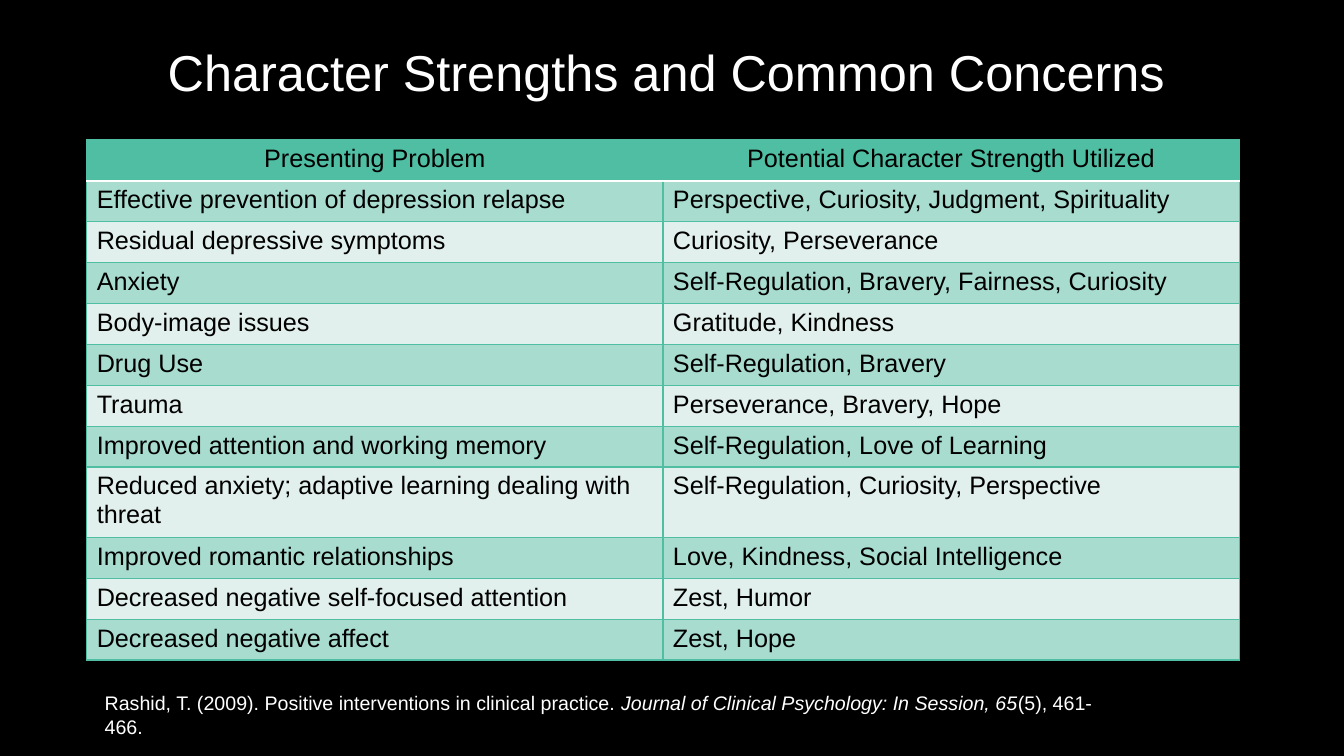
from dataclasses import dataclass
from typing import NamedTuple

from lxml.etree import SubElement
from pptx import Presentation
from pptx.dml.color import RGBColor
from pptx.enum.text import MSO_ANCHOR, MSO_AUTO_SIZE, PP_ALIGN
from pptx.oxml.ns import qn
from pptx.slide import Slide
from pptx.table import _Cell
from pptx.text.text import _Paragraph
from pptx.util import Inches, Pt

SLIDE_WIDTH = Inches(13.33)
SLIDE_HEIGHT = Inches(7.5)


@dataclass(frozen=True)
class Theme:
    font: str = "Arial"
    background: str = "000000"
    light_text: str = "FFFFFF"
    dark_text: str = "000000"
    accent: str = "50BEA3"
    dark_band: str = "A8DCCF"
    light_band: str = "E1F0EC"
    title_size: int = 36
    table_size: int = 18
    citation_size: int = 14
    grid_line: float = 1
    header_line: float = 1.5


class Area(NamedTuple):
    left: float
    top: float
    width: float
    height: float

    def lengths(self) -> tuple[int, int, int, int]:
        return (
            int(SLIDE_WIDTH * self.left / 100),
            int(SLIDE_HEIGHT * self.top / 100),
            int(SLIDE_WIDTH * self.width / 100),
            int(SLIDE_HEIGHT * self.height / 100),
        )


class Concern(NamedTuple):
    problem: str
    strengths: str
    height_share: float = 1


class Phrase(NamedTuple):
    text: str
    italic: bool = False


THEME = Theme()
TITLE_AREA = Area(7.05, 2.27, 85.07, 15.33)
TABLE_AREA = Area(6.45, 18.53, 85.75, 68.8)
CITATION_AREA = Area(7.05, 90.8, 77.79, 4.53)

CONCERNS = [
    Concern("Presenting Problem", "Potential Character Strength Utilized"),
    Concern("Effective prevention of depression relapse",
            "Perspective, Curiosity, Judgment, Spirituality"),
    Concern("Residual depressive symptoms", "Curiosity, Perseverance"),
    Concern("Anxiety", "Self-Regulation, Bravery, Fairness, Curiosity"),
    Concern("Body-image issues", "Gratitude, Kindness"),
    Concern("Drug Use", "Self-Regulation, Bravery"),
    Concern("Trauma", "Perseverance, Bravery, Hope"),
    Concern("Improved attention and working memory",
            "Self-Regulation, Love of Learning"),
    Concern("Reduced anxiety; adaptive learning dealing with threat",
            "Self-Regulation, Curiosity, Perspective", 1.72),
    Concern("Improved romantic relationships",
            "Love, Kindness, Social Intelligence"),
    Concern("Decreased negative self-focused attention", "Zest, Humor"),
    Concern("Decreased negative affect", "Zest, Hope"),
]

CITATION = [
    Phrase("Rashid, T. (2009). Positive interventions in clinical practice. "),
    Phrase("Journal of Clinical Psychology: In Session, 65", italic=True),
    Phrase("(5), 461-466."),
]


def format_runs(paragraph: _Paragraph, size: int, color: str) -> None:
    for run in paragraph.runs:
        run.font.name = THEME.font
        run.font.size = Pt(size)
        run.font.bold = False
        run.font.color.rgb = RGBColor.from_string(color)


def draw_title(slide: Slide, text: str) -> None:
    title = slide.shapes.title
    title.left, title.top, title.width, title.height = TITLE_AREA.lengths()
    frame = title.text_frame
    frame.text = text
    frame.vertical_anchor = MSO_ANCHOR.MIDDLE
    heading = frame.paragraphs[0]
    heading.alignment = PP_ALIGN.CENTER
    heading.line_spacing = 0.9
    format_runs(heading, THEME.title_size, THEME.light_text)


def draw_borders(cell: _Cell, row_index: int) -> None:
    properties = cell._tc.get_or_add_tcPr()
    header_side = {0: "lnB", 1: "lnT"}.get(row_index)
    for position, side in enumerate(("lnL", "lnR", "lnT", "lnB")):
        under_header = side == header_side
        width = THEME.header_line if under_header else THEME.grid_line
        color = THEME.light_text if under_header else THEME.accent
        border = SubElement(properties, qn(f"a:{side}"), w=str(Pt(width)))
        fill = SubElement(border, qn("a:solidFill"))
        SubElement(fill, qn("a:srgbClr"), val=color)
        properties.insert(position, border)


def draw_cell(cell: _Cell, text: str, row_index: int) -> None:
    cell.text = text
    entry = cell.text_frame.paragraphs[0]
    entry.alignment = PP_ALIGN.LEFT if row_index else PP_ALIGN.CENTER
    format_runs(entry, THEME.table_size, THEME.dark_text)
    band = THEME.dark_band if row_index % 2 else THEME.light_band
    cell.fill.solid()
    cell.fill.fore_color.rgb = RGBColor.from_string(band if row_index else THEME.accent)
    draw_borders(cell, row_index)


def draw_concerns(slide: Slide, concerns: list[Concern]) -> None:
    area = TABLE_AREA.lengths()
    table = slide.shapes.add_table(len(concerns), 2, *area).table
    table.first_row = True
    table.horz_banding = False
    row_unit = area[3] / sum(concern.height_share for concern in concerns)
    for row_index, concern in enumerate(concerns):
        table.rows[row_index].height = int(row_unit * concern.height_share)
        draw_cell(table.cell(row_index, 0), concern.problem, row_index)
        draw_cell(table.cell(row_index, 1), concern.strengths, row_index)


def draw_citation(slide: Slide, phrases: list[Phrase]) -> None:
    frame = slide.shapes.add_textbox(*CITATION_AREA.lengths()).text_frame
    frame.word_wrap = True
    frame.auto_size = MSO_AUTO_SIZE.SHAPE_TO_FIT_TEXT
    reference = frame.paragraphs[0]
    for phrase in phrases:
        run = reference.add_run()
        run.text = phrase.text
        run.font.italic = phrase.italic
    format_runs(reference, THEME.citation_size, THEME.light_text)


def main() -> None:
    presentation = Presentation()
    presentation.slide_width = SLIDE_WIDTH
    presentation.slide_height = SLIDE_HEIGHT
    slide = presentation.slides.add_slide(presentation.slide_layouts.get_by_name("Title Only"))
    slide.background.fill.solid()
    slide.background.fill.fore_color.rgb = RGBColor.from_string(THEME.background)
    draw_title(slide, "Character Strengths and Common Concerns")
    draw_concerns(slide, CONCERNS)
    draw_citation(slide, CITATION)
    presentation.save("out.pptx")


if __name__ == "__main__":
    main()
